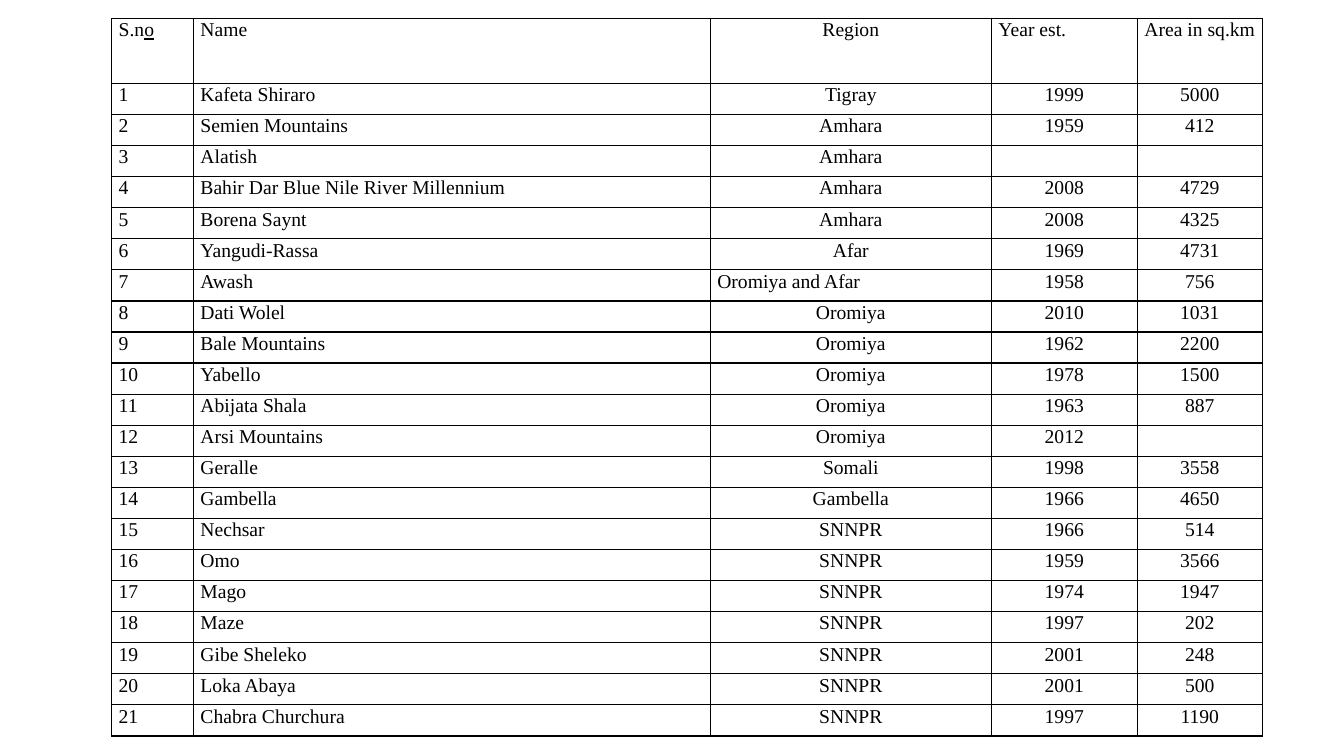
import pptx
import pptx.dml.color
import pptx.enum.text
import pptx.oxml
import pptx.oxml.ns
import pptx.util

Pt = pptx.util.Pt
LEFT = pptx.enum.text.PP_ALIGN.LEFT
CENTER = pptx.enum.text.PP_ALIGN.CENTER

FONT = "Times New Roman"
BLACK = "000000"
COLUMN_WIDTHS = [58.4, 369.2, 200.8, 104.2, 89.4]
COLUMN_ALIGNS = [LEFT, LEFT, CENTER, CENTER, CENTER]
HEADER_HEIGHT = 46.4
ROW_HEIGHT = 22.2

HEADER = ["S.no", "Name", "Region", "Year est.", "Area in sq.km"]
PARKS = [
    ("Kafeta Shiraro", "Tigray", "1999", "5000"),
    ("Semien Mountains", "Amhara", "1959", "412"),
    ("Alatish", "Amhara", "", ""),
    ("Bahir Dar Blue Nile River Millennium", "Amhara", "2008", "4729"),
    ("Borena Saynt", "Amhara", "2008", "4325"),
    ("Yangudi-Rassa", "Afar", "1969", "4731"),
    ("Awash", "Oromiya and Afar", "1958", "756"),
    ("Dati Wolel", "Oromiya", "2010", "1031"),
    ("Bale Mountains", "Oromiya", "1962", "2200"),
    ("Yabello", "Oromiya", "1978", "1500"),
    ("Abijata Shala", "Oromiya", "1963", "887"),
    ("Arsi Mountains", "Oromiya", "2012", ""),
    ("Geralle", "Somali", "1998", "3558"),
    ("Gambella", "Gambella", "1966", "4650"),
    ("Nechsar", "SNNPR", "1966", "514"),
    ("Omo", "SNNPR", "1959", "3566"),
    ("Mago", "SNNPR", "1974", "1947"),
    ("Maze", "SNNPR", "1997", "202"),
    ("Gibe Sheleko", "SNNPR", "2001", "248"),
    ("Loka Abaya", "SNNPR", "2001", "500"),
    ("Chabra Churchura", "SNNPR", "1997", "1190"),
]
# Cells set left in a centred column: (row, column)
LEFT_CELLS = {(0, 3), (7, 2)}


def color(hex_code):
    return pptx.dml.color.RGBColor.from_string(hex_code)


def add_borders(cell, hex_code, width):
    """Draw the four sides of a cell; the lines come before its fill."""
    tcPr = cell._tc.get_or_add_tcPr()
    for i, side in enumerate(("lnL", "lnR", "lnT", "lnB")):
        tcPr.insert(i, pptx.oxml.parse_xml(
            f'<a:{side} {pptx.oxml.ns.nsdecls("a")} w="{Pt(width)}">'
            f'<a:solidFill><a:srgbClr val="{hex_code}"/></a:solidFill>'
            f'<a:prstDash val="solid"/></a:{side}>'))


def fill_cell(cell, runs, align):
    """Write runs of (text, underlined) into a bordered, unfilled cell."""
    cell.fill.background()
    add_borders(cell, BLACK, 1)
    cell.margin_left = cell.margin_right = cell.margin_bottom = 0
    cell.margin_top = Pt(0.6)
    p = cell.text_frame.paragraphs[0]
    p.alignment = align
    p.space_before = Pt(0.6)
    if align == LEFT:
        p._p.get_or_add_pPr().set("marL", str(Pt(5)))
    p.font.name = FONT
    p.font.size = Pt(14)
    p.font.color.rgb = color(BLACK)
    for text, underlined in runs:
        r = p.add_run()
        r.text = text
        if underlined:
            r.font.underline = True


def add_park_table(slide, left, top):
    rows = [HEADER] + [(str(n), *park) for n, park in enumerate(PARKS, 1)]
    heights = [HEADER_HEIGHT] + [ROW_HEIGHT] * len(PARKS)
    sp = slide.shapes.add_table(
        len(rows), len(HEADER), Pt(left), Pt(top),
        Pt(sum(COLUMN_WIDTHS)), Pt(sum(heights)))
    table = sp.table
    table.first_row = table.horz_banding = False
    for column, width in zip(table.columns, COLUMN_WIDTHS):
        column.width = Pt(width)
    for row, height in zip(table.rows, heights):
        row.height = Pt(height)

    for i, values in enumerate(rows):
        for j, value in enumerate(values):
            align = LEFT if (i, j) in LEFT_CELLS else COLUMN_ALIGNS[j]
            if value == "S.no":
                runs = [("S.n", False), ("o", True)]
            else:
                runs = [(value, False)] if value else []
            fill_cell(table.cell(i, j), runs, align)


def main():
    prs = pptx.Presentation()
    prs.slide_width, prs.slide_height = Pt(960), Pt(540)
    slide = prs.slides.add_slide(prs.slide_layouts[6])

    # National parks table
    add_park_table(slide, 79.8, 13.2)

    prs.save("out.pptx")


if __name__ == "__main__":
    main()
